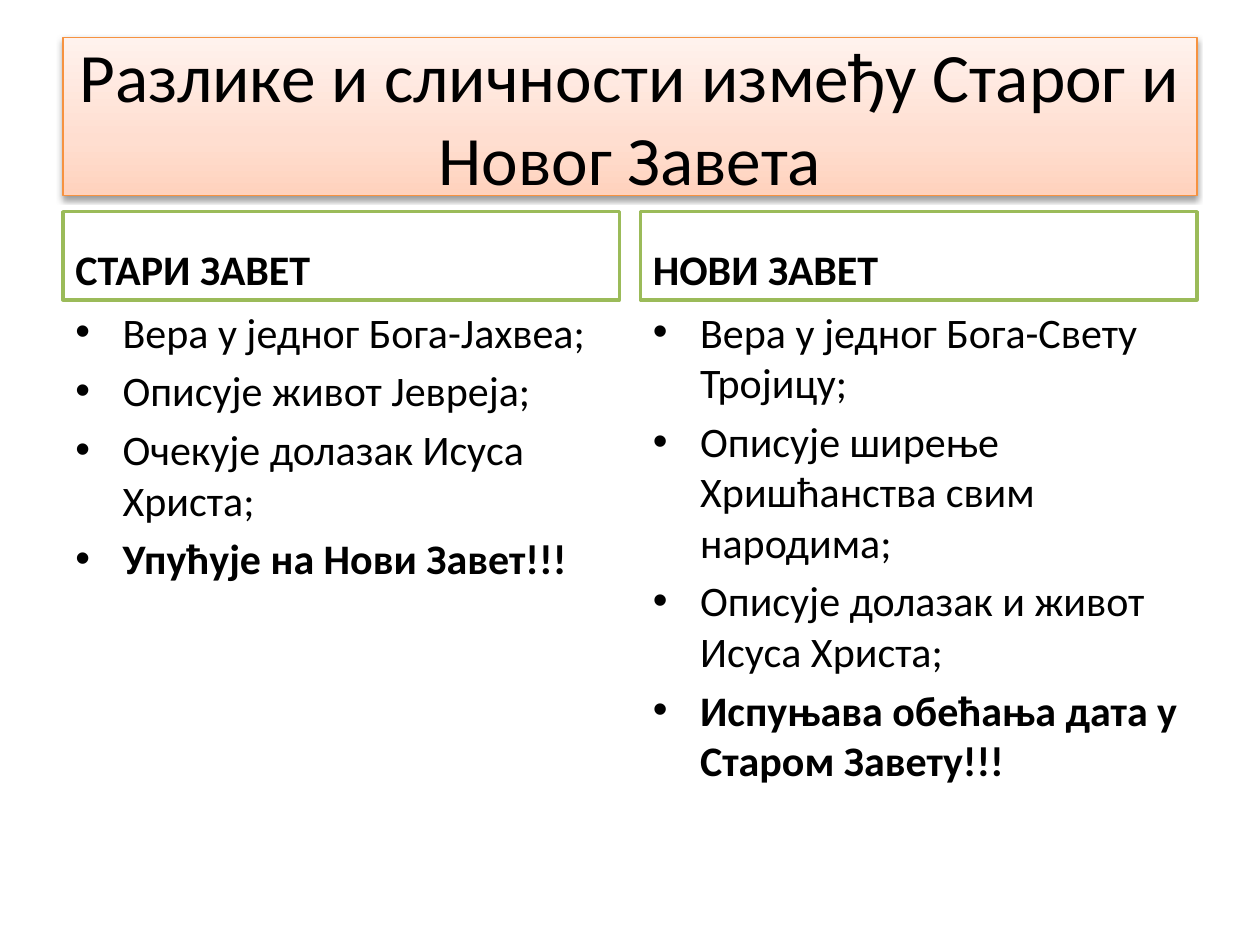
"""Build a slide comparing the Old and the New Testament."""
from dataclasses import dataclass

import lxml.etree
import pptx
import pptx.dml.color
import pptx.enum.shapes
import pptx.enum.text
import pptx.oxml
import pptx.oxml.ns
import pptx.util

Pt = pptx.util.Pt
Anchor = pptx.enum.text.MSO_ANCHOR
Align = pptx.enum.text.PP_ALIGN

COLORS = {
    "text": "000000",
    "paper": "FFFFFF",
    "title_line": "F69240",
    "heading_line": "9BBB59",
    "glow_low": "FFD2BD",
    "glow_mid": "FFDED0",
    "glow_high": "FFF2ED",
}
FONT = "Calibri"
MARGIN = 36
COLUMN_WIDTH = 318
COLUMN_STEP = 330
INDENT = 27
NS = 'xmlns:a="http://schemas.openxmlformats.org/drawingml/2006/main"'


@dataclass(frozen=True)
class Box:
    left: float
    top: float
    width: float
    height: float

    def lengths(self) -> tuple:
        return tuple(Pt(v) for v in (self.left, self.top, self.width, self.height))


@dataclass(frozen=True)
class Testament:
    heading: str
    points: tuple[str, ...]
    conclusion: str


TITLE = "Разлике и сличности између Старог и Новог Завета"
TESTAMENTS = (
    Testament(
        "СТАРИ ЗАВЕТ",
        (
            "Вера у једног Бога-Јахвеа;",
            "Описује живот Јевреја;",
            "Очекује долазак Исуса Христа;",
        ),
        "Упућује на Нови Завет!!!",
    ),
    Testament(
        "НОВИ ЗАВЕТ",
        (
            "Вера у једног Бога-Свету Тројицу;",
            "Описује ширење Хришћанства свим народима;",
            "Описује долазак и живот Исуса Христа;",
        ),
        "Испуњава обећања дата у Старом Завету!!!",
    ),
)


def rgb(name: str) -> pptx.dml.color.RGBColor:
    return pptx.dml.color.RGBColor.from_string(COLORS[name])


def add_run(paragraph, text: str, size: float, bold: bool = False) -> None:
    run = paragraph.add_run()
    run.text = text
    run.font.name = FONT
    run.font.size = Pt(size)
    run.font.bold = bold
    run.font.color.rgb = rgb("text")


def add_panel(slide, box: Box, line: str, weight: float, anchor: Anchor, align: Align):
    panel = slide.shapes.add_shape(
        pptx.enum.shapes.MSO_SHAPE.RECTANGLE, *box.lengths()
    )
    panel.shadow.inherit = False
    panel.fill.solid()
    panel.fill.fore_color.rgb = rgb("paper")
    panel.line.color.rgb = rgb(line)
    panel.line.width = Pt(weight)
    panel.text_frame.word_wrap = True
    panel.text_frame.vertical_anchor = anchor
    panel.text_frame.paragraphs[0].alignment = align
    return panel


def add_title(slide, text: str, box: Box) -> None:
    title = add_panel(slide, box, "title_line", 0.75, Anchor.MIDDLE, Align.CENTER)
    stops = "".join(
        f'<a:gs pos="{percent * 1000}"><a:srgbClr val="{COLORS[name]}"/></a:gs>'
        for percent, name in ((0, "glow_low"), (35, "glow_mid"), (100, "glow_high"))
    )
    gradient = pptx.oxml.parse_xml(
        f'<a:gradFill {NS} rotWithShape="1"><a:gsLst>{stops}</a:gsLst>'
        f'<a:lin ang="{270 * 60000}" scaled="1"/></a:gradFill>'
    )
    properties = title._element.spPr
    properties.replace(properties.find(pptx.oxml.ns.qn("a:solidFill")), gradient)
    shadow = pptx.oxml.parse_xml(
        f'<a:outerShdw {NS} blurRad="{Pt(3.1)}" dist="{Pt(1.6)}" dir="{90 * 60000}" '
        'rotWithShape="0"><a:srgbClr val="000000"><a:alpha val="38000"/></a:srgbClr>'
        "</a:outerShdw>"
    )
    properties.find(pptx.oxml.ns.qn("a:effectLst")).append(shadow)
    add_run(title.text_frame.paragraphs[0], text, 39.6)


def add_bullet(paragraph, text: str, bold: bool) -> None:
    paragraph.space_before = Pt(4.8)
    properties = paragraph._p.get_or_add_pPr()
    properties.set("marL", str(Pt(INDENT)))
    properties.set("indent", str(-Pt(INDENT)))
    for tag, attribute, value in (("buFont", "typeface", "Arial"), ("buChar", "char", "•")):
        mark = lxml.etree.SubElement(properties, pptx.oxml.ns.qn(f"a:{tag}"))
        mark.set(attribute, value)
    add_run(paragraph, text, 24, bold)


def add_testament(slide, testament: Testament, left: float) -> None:
    heading = add_panel(
        slide, Box(left, 121, COLUMN_WIDTH, 50.4),
        "heading_line", 2, Anchor.BOTTOM, Align.LEFT,
    )
    add_run(heading.text_frame.paragraphs[0], testament.heading, 24, True)

    body = slide.shapes.add_textbox(*Box(left, 171.4, COLUMN_WIDTH, 311).lengths())
    frame = body.text_frame
    frame.word_wrap = True
    for index, text in enumerate((*testament.points, testament.conclusion)):
        paragraph = frame.add_paragraph() if index else frame.paragraphs[0]
        add_bullet(paragraph, text, text == testament.conclusion)


def main() -> None:
    deck = pptx.Presentation()
    deck.slide_width, deck.slide_height = Pt(720), Pt(540)
    slide = deck.slides.add_slide(deck.slide_layouts[6])
    add_title(slide, TITLE, Box(MARGIN, 21.6, 648, 90))
    for index, testament in enumerate(TESTAMENTS):
        add_testament(slide, testament, MARGIN + index * COLUMN_STEP)
    deck.save("out.pptx")


if __name__ == "__main__":
    main()
